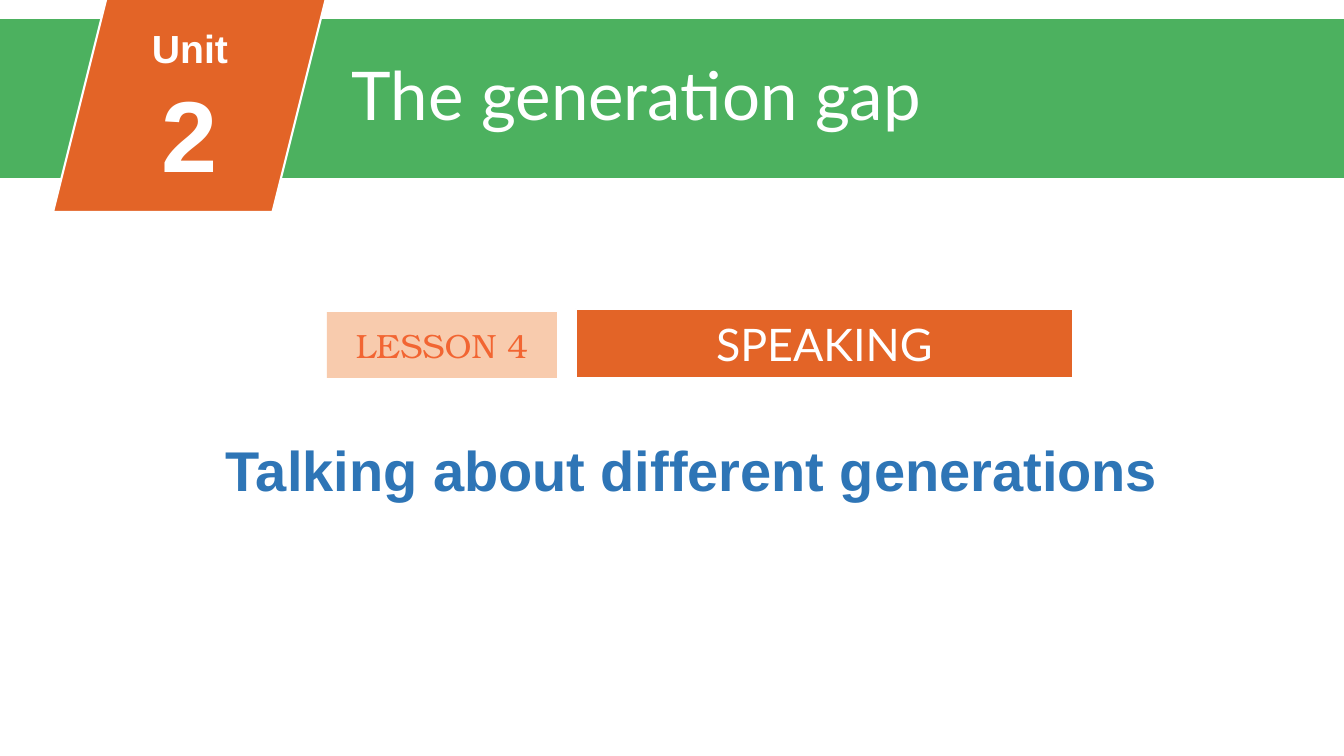
from pptx import Presentation
from pptx import util as u
from pptx.dml.color import RGBColor
from pptx.enum import shapes, text

PX = 914400 / 100.8
COLORS = {
    "white": "FFFFFF",
    "green": "4CB15F",
    "orange": "E36427",
    "peach": "F8CBAD",
    "coral": "F26532",
    "blue": "2E75B6",
}


def px(length):
    return u.Emu(round(length * PX))


def color(name):
    return RGBColor.from_string(COLORS[name])


class LessonSlide:
    def __init__(self, deck):
        self.slide = deck.slides.add_slide(deck.slide_layouts[6])

    def block(self, box, fill, outlined=False, kind=shapes.MSO_SHAPE.RECTANGLE):
        block = self.slide.shapes.add_shape(kind, *map(px, box))
        block.shadow.inherit = False
        block.fill.solid()
        block.fill.fore_color.rgb = color(fill)
        if outlined:
            block.line.color.rgb = color("white")
            block.line.width = u.Pt(1.5)
        else:
            block.line.fill.background()
        return block

    def label(self, box, *lines, **style):
        label = self.slide.shapes.add_textbox(*map(px, box))
        self.set_lines(label.text_frame, lines, **style)

    def set_lines(self, frame, lines, font, ink, bold=False, centred=False):
        """Fill the frame with one paragraph per (wording, point size) pair."""
        frame.word_wrap = True
        if centred:
            frame.vertical_anchor = text.MSO_ANCHOR.MIDDLE
        for number, (wording, size) in enumerate(lines):
            paragraph = frame.add_paragraph() if number else frame.paragraphs[0]
            paragraph.alignment = text.PP_ALIGN.CENTER if centred else text.PP_ALIGN.LEFT
            run = paragraph.add_run()
            run.text = wording
            run.font.color.rgb = color(ink)
            for name, value in {"name": font, "size": u.Pt(size), "bold": bold}.items():
                setattr(run.font, name, value)


def main():
    deck = Presentation()
    deck.slide_width, deck.slide_height = px(1344), px(756)
    lesson = LessonSlide(deck)

    skill = lesson.block((576, 309, 497, 69), "orange", outlined=True)
    lesson.set_lines(skill.text_frame, [("SPEAKING", 32)], "Lato", "white", centred=True)
    lesson.label((216, 431, 1023, 78), ("Talking about different generations", 40),
                 font="Arial", ink="blue", bold=True)
    number = lesson.block((327, 312, 230, 66), "peach")
    lesson.set_lines(number.text_frame, [("LESSON 4", 24)], "TeX Gyre Bonum", "coral",
                     centred=True)

    lesson.block((0, 19, 1344, 159), "green")
    lesson.block((53, -2, 273, 214), "orange", outlined=True,
                 kind=shapes.MSO_SHAPE.PARALLELOGRAM)
    lesson.label((342, 48, 896, 92), ("The generation gap", 48), font="Lato", ink="white")
    lesson.label((120, 19, 140, 179), ("Unit", 28), ("2", 72),
                 font="Arial", ink="white", bold=True, centred=True)

    deck.save("out.pptx")


if __name__ == "__main__":
    main()
